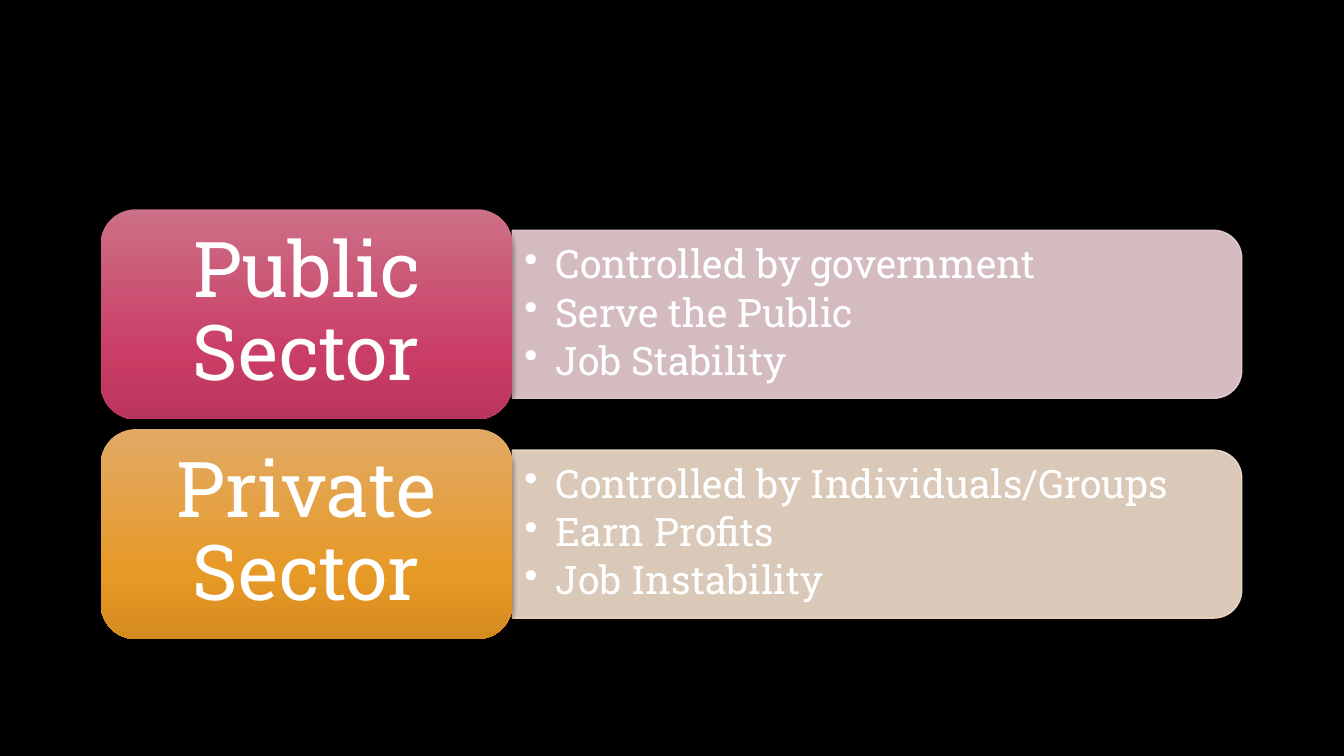
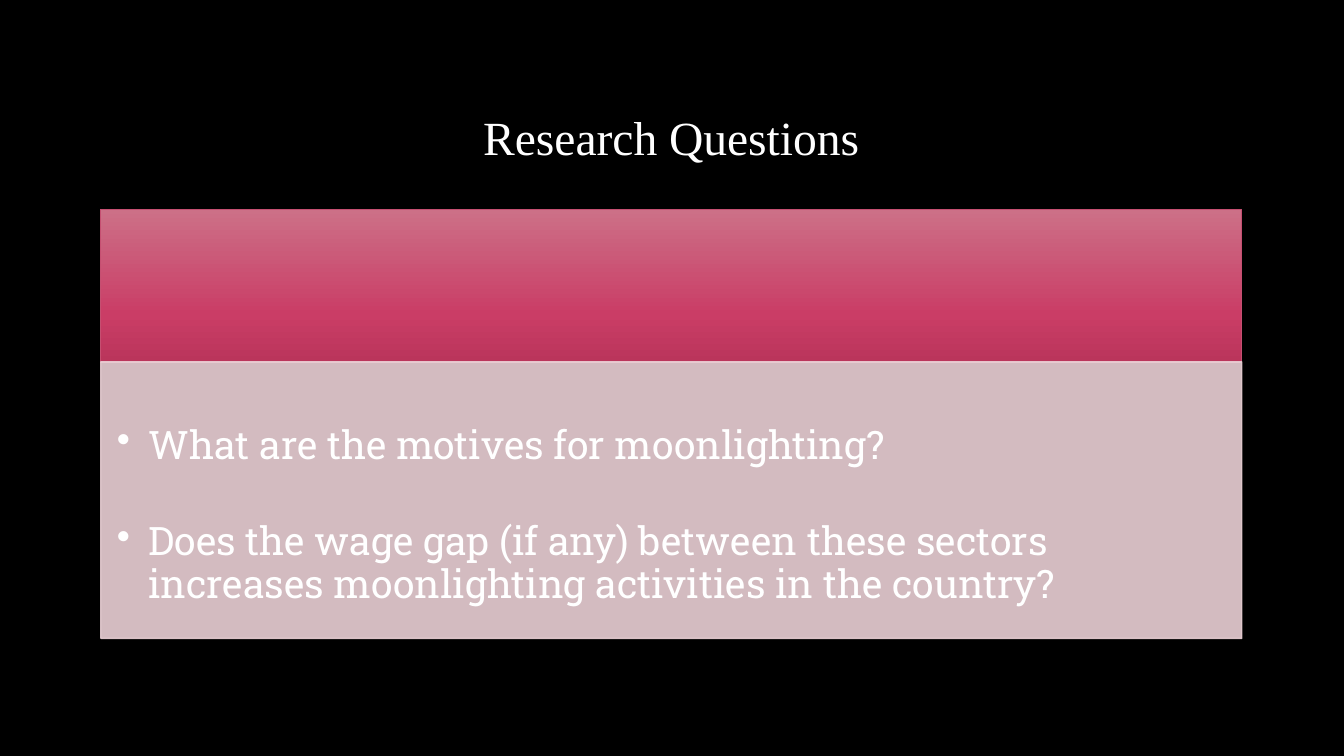
from dataclasses import dataclass
from lxml.etree import SubElement
from pptx import Presentation
from pptx.dml.color import RGBColor
from pptx.enum.shapes import MSO_SHAPE
from pptx.enum.text import MSO_ANCHOR, PP_ALIGN
from pptx.oxml.ns import qn
from pptx.shapes.autoshape import Shape
from pptx.slide import Slide
from pptx.text.text import TextFrame
from pptx.util import Pt

HUES = {"back": "000000", "text": "FFFFFF", "shade": "000000",
        "rose": "EAD0D5", "sand": "F2DECE", "edge": "C54F71"}
FADES = {"rose": {0: "CC7087", 69: "CA3D66", 100: "BA355B"},
         "sand": {0: "E2AA66", 69: "E79926", 100: "D68B1F"}}
LEFT, TOP, WIDE = 72, 149.5, 815
STEP, HIGH, SIDE, INSET = 157, 150, 294, 15
SIDES = ("margin_left", "margin_top", "margin_right", "margin_bottom")


@dataclass(frozen=True)
class Area:
    """A place on the slide, in points."""
    left: float
    top: float
    width: float
    height: float

    def points(self) -> list[Pt]:
        """Give the four lengths in slide units."""
        return [Pt(n) for n in (self.left, self.top, self.width, self.height)]


@dataclass(frozen=True)
class Style:
    """The look of a block of text."""
    font: str
    size: float
    align: PP_ALIGN
    pad: tuple[float, float, float, float]
    anchor: MSO_ANCHOR = MSO_ANCHOR.MIDDLE
    gap: float = 0
    dots: bool = False


@dataclass(frozen=True)
class Sector:
    """A label with its list of points."""
    name: str
    hue: str
    facts: tuple[str, ...]


TITLE = Style("Times New Roman", 34, PP_ALIGN.CENTER, (7.2, 3.6, 7.2, 3.6))
LABEL = Style("Roboto Slab", 55, PP_ALIGN.CENTER, (24, 15.5, 24, 15.5))
FACTS = Style("Roboto Slab", 28, PP_ALIGN.LEFT, (8.6, 4.3, 8.6, 4.3),
              gap=4.2, dots=True)
ASKS = Style("Roboto Slab", 28, PP_ALIGN.LEFT, (11.5, 45.7, 16, 17),
             MSO_ANCHOR.TOP, gap=38.4, dots=True)
SECTORS = (
    Sector("Public Sector", "rose",
           ("Controlled by government", "Serve the Public", "Job Stability")),
    Sector("Private Sector", "sand",
           ("Controlled by Individuals/Groups", "Earn Profits",
            "Job Instability")),
)
QUESTIONS = (
    "What are the motives for moonlighting?",
    "Does the wage gap (if any) between these sectors increases "
    "moonlighting activities in the country?",
)


def apply(target: object, values: dict[str, object]) -> None:
    """Set each named value on the target."""
    for name, value in values.items():
        setattr(target, name, value)


def write(frame: TextFrame, lines: tuple[str, ...], style: Style) -> None:
    """Fill a text frame with styled lines."""
    apply(frame, {"word_wrap": True, "vertical_anchor": style.anchor,
                  **{side: Pt(n) for side, n in zip(SIDES, style.pad)}})
    frame.text = "\n".join(lines)
    for para in frame.paragraphs:
        apply(para, {"alignment": style.align, "line_spacing": 0.9,
                     "space_after": Pt(style.gap)})
        apply(para.font, {"name": style.font, "size": Pt(style.size)})
        para.font.color.rgb = RGBColor.from_string(HUES["text"])
        if style.dots:
            props = para._p.get_or_add_pPr()
            props.set("marL", str(Pt(22.5)))
            props.set("indent", str(Pt(-22.5)))
            SubElement(props, qn("a:buChar"), char="•")


def draw(slide: Slide, kind: MSO_SHAPE, area: Area) -> Shape:
    """Add a bare shape with no shadow."""
    shape = slide.shapes.add_shape(kind, *area.points())
    shape.shadow.inherit = False
    shape.line.fill.background()
    return shape


def edge(shape: Shape, hue: str) -> None:
    """Give a shape a thin line."""
    shape.line.width = Pt(1)
    shape.line.color.rgb = RGBColor.from_string(HUES[hue])


def glow(slide: Slide, kind: MSO_SHAPE, area: Area, hue: str) -> Shape:
    """Add a shape with a colour fade and a soft shadow."""
    shape = draw(slide, kind, area)
    shape.fill.gradient()
    shape.fill.gradient_angle = 270
    props = shape._element.spPr
    stops = props.find(qn("a:gradFill")).find(qn("a:gsLst"))
    stops.clear()
    for place, tone in FADES[hue].items():
        stop = SubElement(stops, qn("a:gs"), pos=str(place * 1000))
        SubElement(stop, qn("a:srgbClr"), val=tone)
    cast = SubElement(props.find(qn("a:effectLst")), qn("a:outerShdw"),
                      blurRad=str(Pt(4)), dist=str(Pt(3)), dir="5400000",
                      rotWithShape="0")
    tone = SubElement(cast, qn("a:srgbClr"), val=HUES["shade"])
    SubElement(tone, qn("a:alpha"), val="54000")
    return shape


def panel(slide: Slide, kind: MSO_SHAPE, area: Area, hue: str) -> Shape:
    """Add a pale shape that lets a little show through."""
    shape = draw(slide, kind, area)
    shape.fill.solid()
    shape.fill.fore_color.rgb = RGBColor.from_string(HUES[hue])
    edge(shape, hue)
    for tone in shape._element.spPr.iter(qn("a:srgbClr")):
        SubElement(tone, qn("a:alpha"), val="90000")
    return shape


def note(slide: Slide, area: Area, lines: tuple[str, ...],
         style: Style) -> None:
    """Add a text box."""
    write(slide.shapes.add_textbox(*area.points()).text_frame, lines, style)


def sector(slide: Slide, top: float, item: Sector) -> None:
    """Draw one sector row."""
    start, width, height = LEFT + SIDE, WIDE - SIDE, HIGH - 2 * INSET
    turned = Area(start + (width - height) / 2,
                  top + (HIGH - width) / 2, height, width)
    panel(slide, MSO_SHAPE.ROUND_2_SAME_RECTANGLE, turned,
          item.hue).rotation = 90
    note(slide, Area(start, top + 21, width - 5, HIGH - 42), item.facts, FACTS)
    label = glow(slide, MSO_SHAPE.ROUNDED_RECTANGLE,
                 Area(LEFT, top, SIDE, HIGH), item.hue)
    write(label.text_frame, (item.name,), LABEL)


def main() -> None:
    """Build and save both slides."""
    deck = Presentation()
    apply(deck, {"slide_width": Pt(960), "slide_height": Pt(540)})
    back = deck.slide_master.background.fill
    back.solid()
    back.fore_color.rgb = RGBColor.from_string(HUES["back"])
    first, second = (deck.slides.add_slide(deck.slide_layouts[6])
                     for _ in range(2))

    for row, item in enumerate(SECTORS):
        sector(first, TOP + row * STEP, item)

    note(second, Area(LEFT, 48, WIDE, 104.5), ("Research Questions",), TITLE)
    band = glow(second, MSO_SHAPE.RECTANGLE,
                Area(LEFT, TOP, WIDE, 109), "rose")
    edge(band, "edge")
    body = panel(second, MSO_SHAPE.RECTANGLE,
                 Area(LEFT, TOP + 109, WIDE, 197.5), "rose")
    write(body.text_frame, QUESTIONS, ASKS)
    deck.save("out.pptx")


if __name__ == "__main__":
    main()
